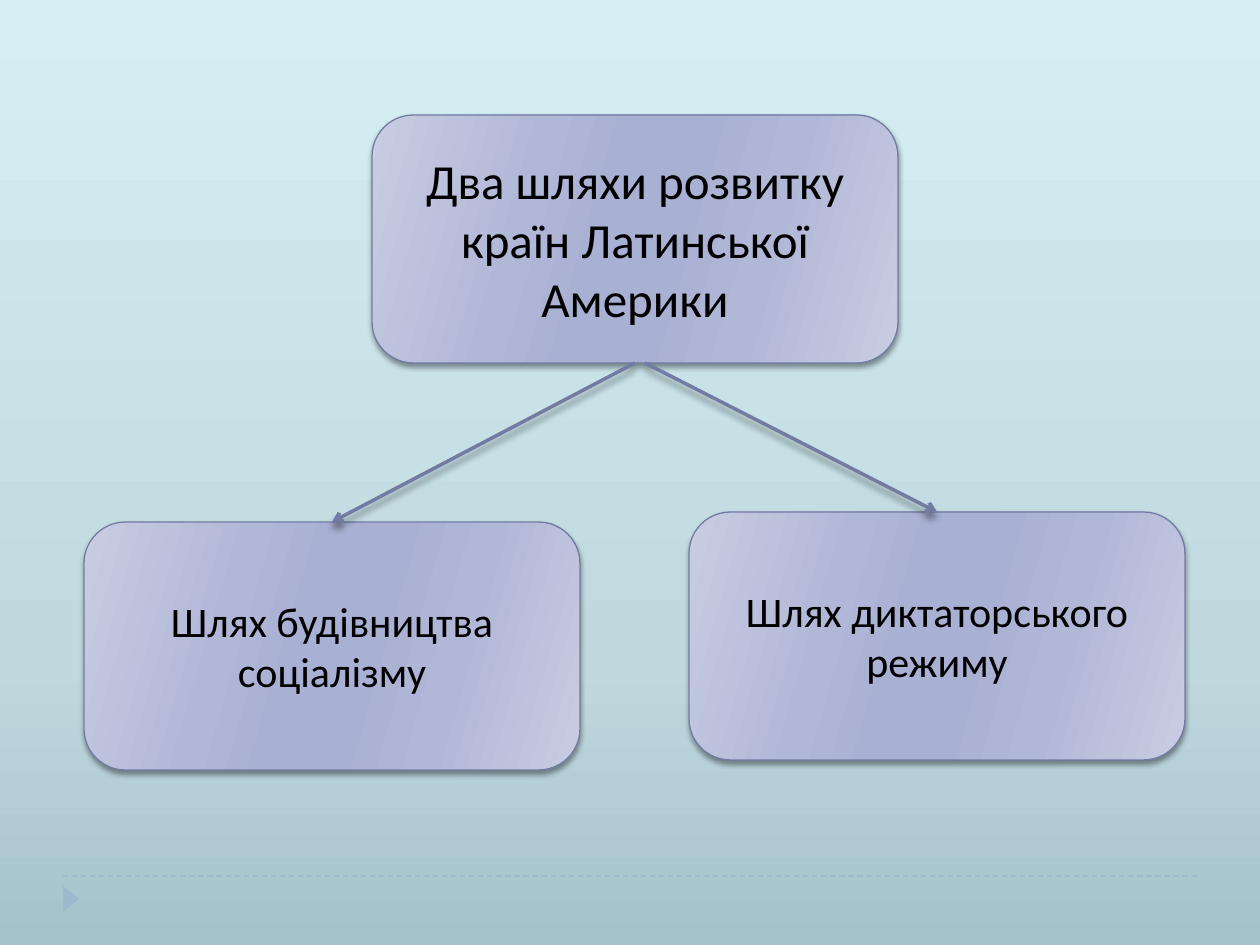
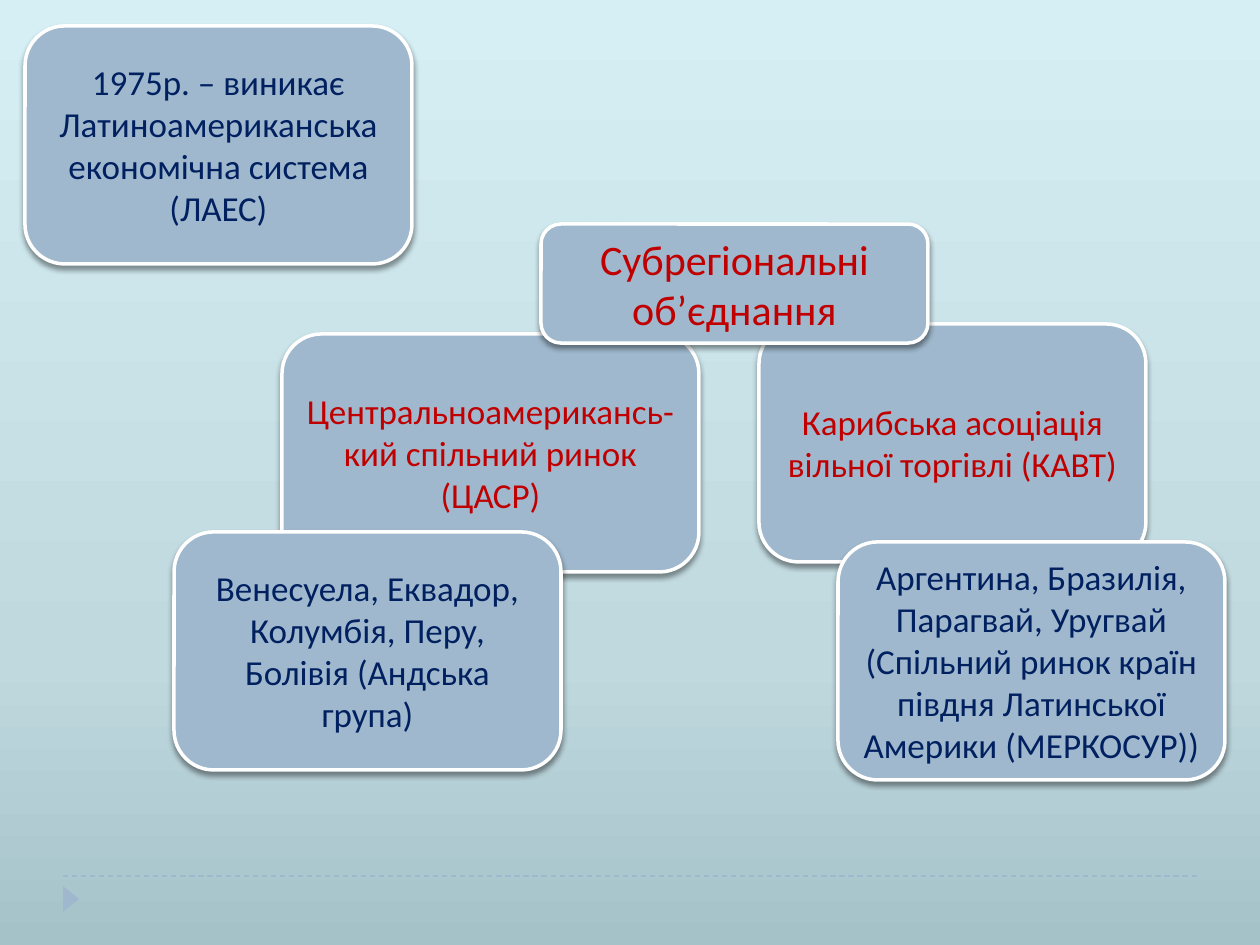
from lxml import etree
from pptx import Presentation
from pptx.dml.color import RGBColor
from pptx.enum.dml import MSO_LINE
from pptx.enum.shapes import MSO_CONNECTOR, MSO_SHAPE
from pptx.enum.text import MSO_ANCHOR, PP_ALIGN
from pptx.oxml.ns import qn
from pptx.util import Pt

STRAIGHT = MSO_CONNECTOR.STRAIGHT
ROUNDED, TRIANGLE = MSO_SHAPE.ROUNDED_RECTANGLE, MSO_SHAPE.ISOSCELES_TRIANGLE
DASH, MIDDLE, CENTER = MSO_LINE.DASH, MSO_ANCHOR.MIDDLE, PP_ALIGN.CENTER
TOP, BOTTOM = 0, 2  # connection sites

# --- Content: text and (left, top, width, height) in px ---
ROOT = ("Два шляхи розвитку країн Латинської Америки", (372, 115, 526, 248))
PATH_SIZE = (496, 248)
PATHS = [
    ("Шлях будівництва соціалізму", (84, 522)),
    ("Шлях диктаторського режиму", (689, 512)),
]
RIGHT_ARROW_START = (645, 363)

CARD_W, CARD_H = 387, 238
UNIONS = [  # text, box, colour, size
    ("1975р. – виникає Латиноамериканська економічна система\n(ЛАЕС)",
     (25, 26, CARD_W, CARD_H), "navy", "body"),
    ("Центральноамерикансь- кий спільний ринок (ЦАСР)",
     (282, 334, 417, CARD_H), "red", "body"),
    ("Карибська асоціація вільної торгівлі (КАВТ)",
     (759, 324, CARD_W, CARD_H), "red", "body"),
    ("Венесуела, Еквадор, Колумбія, Перу, Болівія (Андська група)",
     (174, 532, CARD_W, CARD_H), "navy", "body"),
    ("Субрегіональні об’єднання",
     (541, 224, CARD_W, CARD_H // 2), "red", "heading"),
    ("Аргентина, Бразилія, Парагвай, Уругвай (Спільний ринок країн "
     "півдня Латинської Америки (МЕРКОСУР))",
     (838, 542, CARD_W, CARD_H), "navy", "body"),
]


class Theme:
    font = "Calibri"
    sizes = {"root": 28, "heading": 24, "body": 20}
    colors = {"black": "000000", "navy": "002060", "red": "C00000",
              "steel": "9FB8CD", "violet": "727CA3", "white": "FFFFFF"}
    background = [(0, "A5C2C9"), (30, "C0D9DF"), (100, "D5EFF5")]
    lilac = [(0, "C9CDE2"), (30, "B1B7D7"), (45, "A8B0D3"),
             (55, "A8B0D3"), (73, "B1B7D7"), (100, "C9CDE2")]
    box_shadow = (3, 2)      # blur, distance in points
    arrow_shadow = (4, 3.4)


def px(*values):
    return [round(v * 914400 / 126) for v in values]


def rgb(name):
    return RGBColor.from_string(Theme.colors[name])


def add_node(parent, tag, **attrs):
    return etree.SubElement(parent, qn(tag), {k: str(v) for k, v in attrs.items()})


def set_gradient(fill, owner, stops, angle):
    fill.gradient()
    fill.gradient_angle = angle
    stop_list = next(owner.iter(qn("a:gsLst")))
    for old in list(stop_list):
        stop_list.remove(old)
    for pos, color in stops:
        gs = add_node(stop_list, "a:gs", pos=pos * 1000)
        add_node(gs, "a:srgbClr", val=color)


def set_line(line, color, width):
    line.color.rgb = rgb(color)
    line.width = Pt(width)


def set_effects(sp, shadow=None):
    """Replace the inherited shadow; call after fill and line are set."""
    effects = add_node(sp.element.spPr, "a:effectLst")
    if shadow:
        blur, dist = (int(Pt(v)) for v in shadow)
        outer = add_node(effects, "a:outerShdw", blurRad=blur, dist=dist,
                         dir=90 * 60000, rotWithShape=0)
        color = add_node(outer, "a:srgbClr", val=Theme.colors["black"])
        add_node(color, "a:alpha", val=40000)


def set_text(sp, text, size, color):
    tf = sp.text_frame
    tf.word_wrap = True
    tf.vertical_anchor = MIDDLE
    for i, line in enumerate(text.split("\n")):
        p = tf.add_paragraph() if i else tf.paragraphs[0]
        p.alignment = CENTER
        r = p.add_run()
        r.text = line
        r.font.name = Theme.font
        r.font.size = Pt(Theme.sizes[size])
        r.font.color.rgb = rgb(color)


def add_box(slide, text, box, size, color="black", lilac=False):
    sp = slide.shapes.add_shape(ROUNDED, *px(*box))
    if lilac:
        set_gradient(sp.fill, sp.element, Theme.lilac, 344)
        set_line(sp.line, "violet", 0.75)
    else:
        sp.fill.solid()
        sp.fill.fore_color.rgb = rgb("steel")
        set_line(sp.line, "white", 2)
    set_effects(sp, Theme.box_shadow)
    set_text(sp, text, size, color)
    return sp


def add_line(slide, start, end, color, width):
    cx = slide.shapes.add_connector(STRAIGHT, *px(*start, *end))
    set_line(cx.line, color, width)
    return cx


def add_arrow(slide, start, target):
    cx = add_line(slide, start, start, "violet", 2)
    cx.end_connect(target, TOP)
    add_node(cx.line._get_or_add_ln(), "a:tailEnd", type="arrow")
    set_effects(cx, Theme.arrow_shadow)
    return cx


def new_slide(prs):
    """Blank slide with the shared background, dashed rule and marker."""
    slide = prs.slides.add_slide(prs.slide_layouts[6])
    set_gradient(slide.background.fill, slide.element, Theme.background, 90)
    rule = add_line(slide, (63, 876), (1197, 876), "steel", 0.75)
    rule.line.dash_style = DASH
    set_effects(rule)
    marker = slide.shapes.add_shape(TRIANGLE, *px(58, 891, 26, 16))
    marker.rotation = 90
    marker.fill.solid()
    marker.fill.fore_color.rgb = rgb("steel")
    marker.line.fill.background()
    set_effects(marker)
    return slide


def build_paths(prs):
    slide = new_slide(prs)
    root = add_box(slide, *ROOT, "root", lilac=True)
    left, right = [add_box(slide, text, pos + PATH_SIZE, "heading", lilac=True)
                   for text, pos in PATHS]
    add_arrow(slide, RIGHT_ARROW_START, left).begin_connect(root, BOTTOM)
    add_arrow(slide, RIGHT_ARROW_START, right)


def build_unions(prs):
    slide = new_slide(prs)
    for text, box, color, size in UNIONS:
        add_box(slide, text, box, size, color)


def main():
    prs = Presentation()
    prs.slide_width, prs.slide_height = px(1260, 945)
    build_paths(prs)
    build_unions(prs)
    prs.save("out.pptx")


if __name__ == "__main__":
    main()
